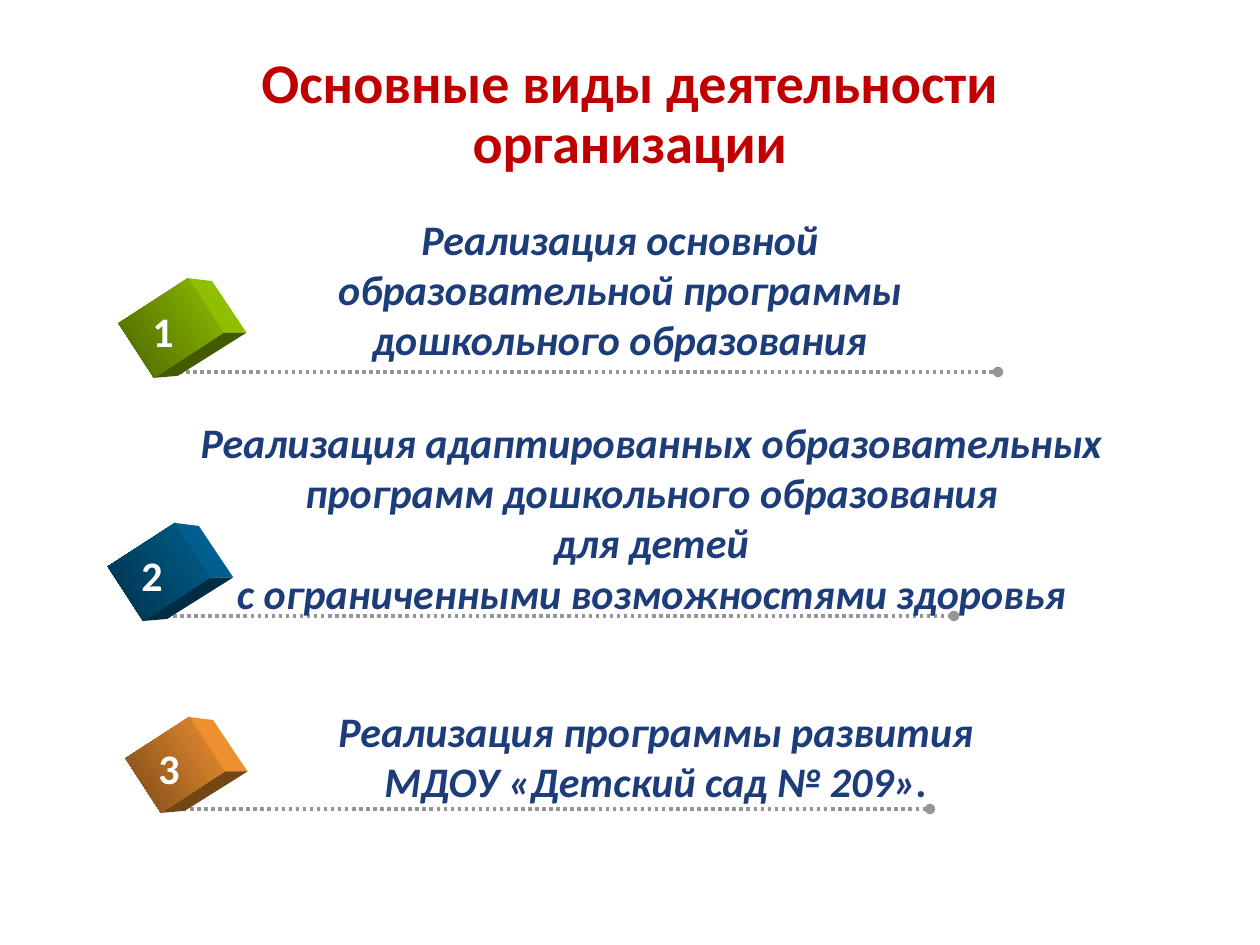
"""Build a slide listing three main activities, each marked with a numbered cube."""
import math

import pptx
import pptx.dml.color
import pptx.enum.dml
import pptx.enum.shapes
import pptx.enum.text
import pptx.oxml
import pptx.oxml.ns
import pptx.util

RGBColor = pptx.dml.color.RGBColor
ALIGN = pptx.enum.text.PP_ALIGN
ANCHOR = pptx.enum.text.MSO_ANCHOR

SCALE = 914400 // 126
RED = RGBColor(0xC0, 0x00, 0x00)
NAVY = RGBColor(0x1D, 0x3C, 0x7A)
WHITE = RGBColor(0xFF, 0xFF, 0xFF)
GRAY = RGBColor(0x96, 0x96, 0x96)

TITLE = "Основные виды деятельности организации"
TITLE_BOX = (87, 54, 1086, 123)
TITLE_FORMAT = {"name": "Calibri", "size": pptx.util.Pt(32), "bold": True}
TEXT_FORMAT = {"name": "Calibri", "size": pptx.util.Pt(24), "bold": True}

ACTIVITIES = [
    {
        "lines": ["Реализация основной образовательной программы дошкольного образования"],
        "box": (305, 207, 630, 165), "wrap": True,
        "rule": (179, 998, 372), "number": (140, 299, 60, 63),
        "center": (171, 328), "length": 83,
        "light": RGBColor(0x90, 0xBE, 0x00), "shade": RGBColor(0x4A, 0x64, 0x00),
        "dark": RGBColor(0x43, 0x5A, 0x00),
    },
    {
        "lines": [
            "Реализация адаптированных образовательных",
            "программ дошкольного образования",
            "для детей",
            "с ограниченными возможностями здоровья",
        ],
        "box": (179, 410, 945, 267), "wrap": False,
        "rule": (166, 954, 616), "number": (129, 543, 58, 63),
        "center": (159, 572), "length": 80,
        "light": RGBColor(0x00, 0x5F, 0x8E), "shade": RGBColor(0x00, 0x32, 0x4B),
        "dark": RGBColor(0x00, 0x2D, 0x44),
    },
    {
        "lines": ["Реализация программы развития МДОУ «Детский сад № 209»."],
        "box": (285, 699, 742, 115), "wrap": True,
        "rule": (183, 930, 809), "number": (146, 736, 56, 63),
        "center": (175, 765), "length": 76,
        "light": RGBColor(0xEF, 0x90, 0x30), "shade": RGBColor(0x7A, 0x4A, 0x18),
        "dark": RGBColor(0x73, 0x46, 0x18),
    },
]

CUBE_WIDTH = 65
CUBE_ANGLE = 57
DEPTH_TOP, DEPTH_MIDDLE, DEPTH_BOTTOM = (24, 3), (23, 0), (24, -2)


def emu(*lengths):
    return [round(length * SCALE) for length in lengths]


def set_attributes(target, values):
    for name, value in values.items():
        setattr(target, name, value)


def add_text(slide, lines, box, color, align, wrap=True, italic=False):
    frame = slide.shapes.add_textbox(*emu(*box)).text_frame
    frame.word_wrap = wrap
    frame.text = "\n".join(lines)
    for paragraph in frame.paragraphs:
        paragraph.alignment = align
        set_attributes(paragraph.font, TEXT_FORMAT | {"italic": italic})
        paragraph.font.color.rgb = color


def add_rule(slide, left, right, y):
    rule = slide.shapes.add_connector(
        pptx.enum.shapes.MSO_CONNECTOR.STRAIGHT, *emu(left, y, right, y))
    rule.line.color.rgb = GRAY
    rule.line.width = pptx.util.Pt(2)
    rule.line.dash_style = pptx.enum.dml.MSO_LINE.ROUND_DOT
    namespace = pptx.oxml.ns.nsdecls("a")
    rule.line._get_or_add_ln().append(
        pptx.oxml.parse_xml(f'<a:tailEnd {namespace} type="oval"/>'))
    rule._element.spPr.append(pptx.oxml.parse_xml(f"<a:effectLst {namespace}/>"))


def add_face(slide, points, color):
    builder = slide.shapes.build_freeform(*emu(*points[0]), scale=1.0)
    builder.add_line_segments([emu(*point) for point in points[1:]], close=True)
    face = builder.convert_to_shape()
    face.shadow.inherit = False
    face.fill.solid()
    face.fill.fore_color.rgb = color
    face.line.fill.background()


def add_cube(slide, center, length, light, shade, dark):
    x, y = center
    cosine = math.cos(math.radians(CUBE_ANGLE)) / 2
    sine = math.sin(math.radians(CUBE_ANGLE)) / 2
    across = (CUBE_WIDTH * cosine, CUBE_WIDTH * sine)
    along = (-length * sine, length * cosine)
    top, middle, bottom = [
        (x + a * across[0] + b * along[0], y + a * across[1] + b * along[1])
        for a, b in ((-1, -1), (1, -1), (1, 1))]
    far_top, far_middle, far_bottom = [
        (point[0] + depth[0], point[1] + depth[1])
        for point, depth in ((top, DEPTH_TOP), (middle, DEPTH_MIDDLE), (bottom, DEPTH_BOTTOM))]
    add_face(slide, [top, far_top, far_middle, middle], light)
    add_face(slide, [middle, far_middle, far_bottom, bottom], dark)

    front = slide.shapes.add_shape(
        pptx.enum.shapes.MSO_SHAPE.RECTANGLE,
        *emu(x - CUBE_WIDTH / 2, y - length / 2, CUBE_WIDTH, length))
    front.rotation = CUBE_ANGLE
    front.shadow.inherit = False
    front.line.fill.background()
    front.fill.gradient()
    front.fill.gradient_angle = 270
    for stop, color in zip(front.fill.gradient_stops, (light, shade)):
        stop.color.rgb = color


def add_title(slide):
    title = slide.shapes.title
    set_attributes(title, dict(zip(("left", "top", "width", "height"), emu(*TITLE_BOX))))
    title.text_frame.text = TITLE
    set_attributes(title.text_frame, {"word_wrap": True, "vertical_anchor": ANCHOR.MIDDLE})
    paragraph = title.text_frame.paragraphs[0]
    set_attributes(paragraph, {"alignment": ALIGN.CENTER, "line_spacing": 0.9})
    set_attributes(paragraph.font, TITLE_FORMAT)
    paragraph.font.color.rgb = RED


def main():
    presentation = pptx.Presentation()
    presentation.slide_width, presentation.slide_height = emu(1260, 945)
    slide = presentation.slides.add_slide(presentation.slide_layouts[5])
    add_title(slide)
    for number, activity in enumerate(ACTIVITIES, start=1):
        add_rule(slide, *activity["rule"])
        add_cube(slide, *[activity[key] for key in ("center", "length", "light", "shade", "dark")])
        add_text(slide, [str(number)], activity["number"], WHITE, ALIGN.LEFT)
        add_text(slide, activity["lines"], activity["box"], NAVY, ALIGN.CENTER,
                 activity["wrap"], italic=True)
    presentation.save("out.pptx")


if __name__ == "__main__":
    main()
